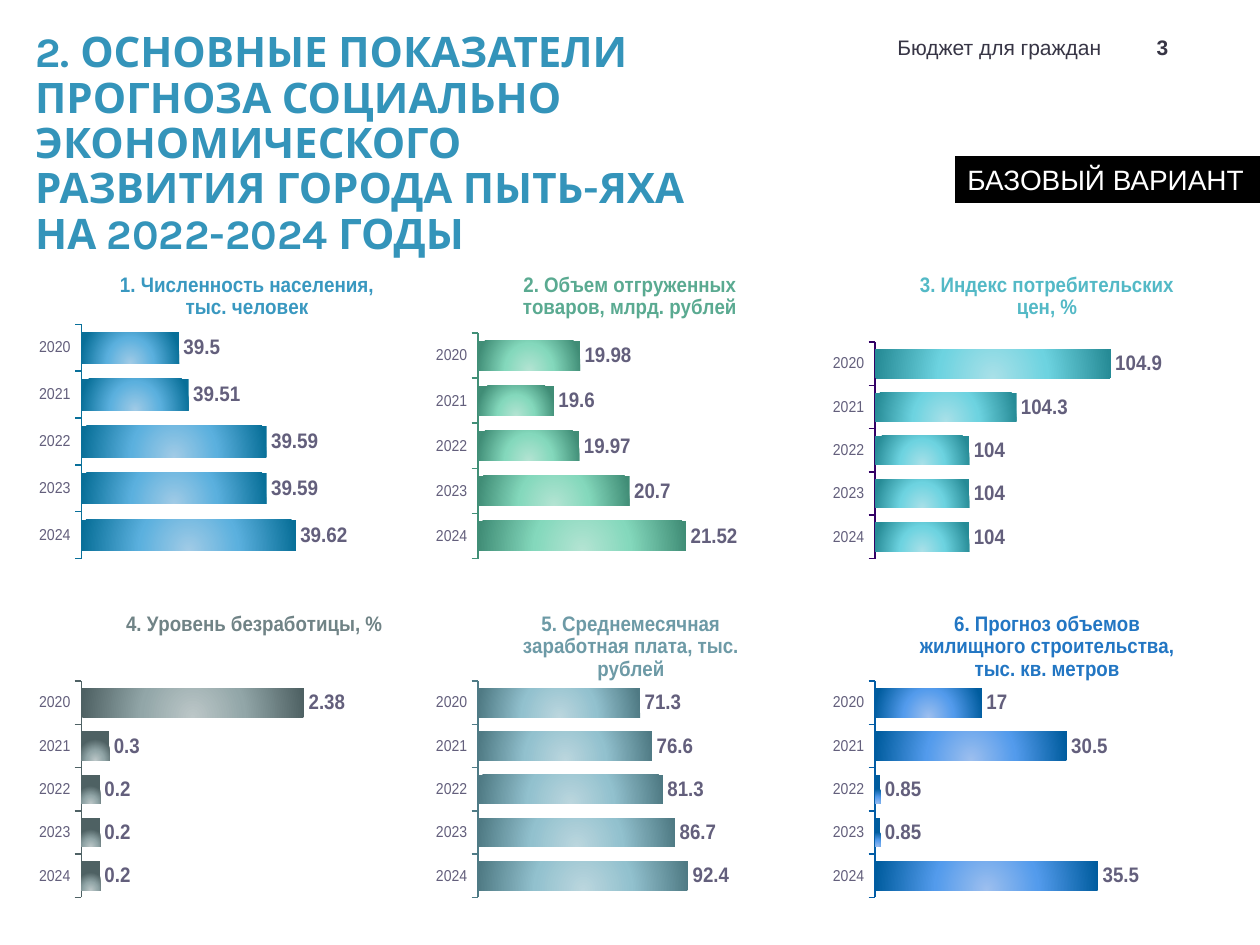
from lxml import etree
from pptx import Presentation
from pptx import util as u
from pptx.chart.data import CategoryChartData
from pptx.dml.color import RGBColor
from pptx.enum import chart as charts, shapes, text
from pptx.oxml import parse_xml
from pptx.oxml.ns import nsdecls, qn

WHITE = RGBColor(0xFF, 0xFF, 0xFF)
BLACK = RGBColor(0, 0, 0)
HEADING = RGBColor(0x34, 0x94, 0xBA)
INK = RGBColor(0x37, 0x35, 0x45)
LABEL = RGBColor(0x63, 0x5F, 0x7C)

COLUMN_LEFT, COLUMN_STEP = 0.31, 3.15
ROW_TOP, ROW_STEP = 2.08, 2.69
CHART_WIDTH, CHART_HEIGHT = 3.07, 2.36
YEARS = ["2020", "2021", "2022", "2023", "2024"]

INDICATORS = [
    ("1. Численность населения, тыс. человек", [39.5, 39.51, 39.59, 39.59, 39.62],
     "3998C0", "09709A", ("A1CBE6", "5BB0DE", "086F98"), (0.01, 0.21, 0.7, 0.79), 0.11),
    ("2. Объем отгруженных товаров, млрд. рублей", [19.98, 19.6, 19.97, 20.7, 21.52],
     "5AAA91", "418F77", ("B4E4D3", "84D8BC", "408D76"), (0, 0.24, 0.7, 0.76), 0.12),
    ("3. Индекс потребительских цен, %", [104.9, 104.3, 104, 104, 104],
     "53B9C6", "330066", ("A9E0E8", "6DD3E0", "268B96"), (0, 0.27, 0.73, 0.73), 0.12),
    ("4. Уровень безработицы, %", [2.38, 0.3, 0.2, 0.2, 0.2],
     "708386", "4F6265", ("BCC7C8", "92A6A8", "4E6163"), (0, 0.27, 0.68, 0.73), 0.12),
    ("5. Среднемесячная заработная плата, тыс. рублей", [71.3, 76.6, 81.3, 86.7, 92.4],
     "6D9AA6", "4F7B86", ("BBD6DE", "92C1CE", "4F7A84"), (0, 0.27, 0.99, 0.73), 0.12),
    ("6. Прогноз объемов жилищного строительства, тыс. кв. метров", [17, 30.5, 0.85, 0.85, 35.5],
     "2276C3", "025CA5", ("9DBFEE", "539BEC", "005C9E"), (0, 0.27, 0.73, 0.73), 0.12),
]


def style(font, size, color, bold=False, name="Arial"):
    font.name, font.size, font.bold = name, u.Pt(size), bold
    font.color.rgb = color


def manual_layout(**settings):
    layout = parse_xml(f"<c:layout {nsdecls('c')}><c:manualLayout/></c:layout>")
    for tag, value in settings.items():
        etree.SubElement(layout[0], qn(f"c:{tag}")).set("val", str(value))
    return layout


deck = Presentation()
deck.slide_width, deck.slide_height = u.Inches(10), u.Inches(7.5)
page = deck.slides.add_slide(deck.slide_layouts[6])

TEXTS = [
    ("2. ОСНОВНЫЕ ПОКАЗАТЕЛИ ПРОГНОЗА СОЦИАЛЬНО ЭКОНОМИЧЕСКОГО РАЗВИТИЯ ГОРОДА ПЫТЬ-ЯХА НА 2022-2024 ГОДЫ",
     (0.28, 0.2, 5.2, 1.69), 24, HEADING, True, "Karla", text.PP_ALIGN.LEFT, text.MSO_ANCHOR.TOP),
    ("Бюджет для граждан", (6.42, 0.19, 2.42, 0.33), 12, INK, False, "Arial",
     text.PP_ALIGN.RIGHT, text.MSO_ANCHOR.BOTTOM),
    ("3", (8.95, 0.19, 0.55, 0.33), 12, INK, True, "Arial",
     text.PP_ALIGN.CENTER, text.MSO_ANCHOR.BOTTOM),
]
for words, place, size, color, bold, name, align, anchor in TEXTS:
    box = page.shapes.add_textbox(*map(u.Inches, place))
    frame = box.text_frame
    frame.text, frame.word_wrap, frame.vertical_anchor = words, True, anchor
    para = frame.paragraphs[0]
    para.alignment = align
    style(para.runs[0].font, size, color, bold, name)
    if color == HEADING:
        frame.margin_left = frame.margin_right = 0
        para.line_spacing = 0.9

banner = page.shapes.add_shape(shapes.MSO_SHAPE.RECTANGLE, *map(u.Inches, (7.58, 1.24, 2.42, 0.37)))
banner.shadow.inherit = False
banner.fill.solid()
banner.fill.fore_color.rgb = BLACK
banner.line.fill.background()
frame = banner.text_frame
frame.text, frame.word_wrap = "БАЗОВЫЙ ВАРИАНТ", False
frame.auto_size = text.MSO_AUTO_SIZE.SHAPE_TO_FIT_TEXT
frame.vertical_anchor = text.MSO_ANCHOR.TOP
frame.paragraphs[0].alignment = text.PP_ALIGN.LEFT
style(frame.paragraphs[0].runs[0].font, 16, WHITE)

for index, (heading, values, title_color, axis_color, stops, plot_area, title_left) in enumerate(INDICATORS):
    row, column = divmod(index, 3)
    data = CategoryChartData()
    data.categories = YEARS
    data.add_series("Series 1", values)
    place = (COLUMN_LEFT + column * COLUMN_STEP, ROW_TOP + row * ROW_STEP, CHART_WIDTH, CHART_HEIGHT)
    chart = page.shapes.add_chart(charts.XL_CHART_TYPE.BAR_CLUSTERED, *map(u.Inches, place), data).chart
    style(chart.font, 10, LABEL)
    chart.has_legend = False

    title = chart.chart_title
    title.text_frame.text = heading
    style(title.text_frame.paragraphs[0].runs[0].font, 12, RGBColor.from_string(title_color), True)
    title.include_in_layout = False
    title_xml = title._element
    for old in title_xml.findall(qn("c:layout")):
        title_xml.remove(old)
    title_xml.find(qn("c:tx")).addnext(
        manual_layout(xMode="edge", yMode="edge", x=title_left, y=0.02))

    years = chart.category_axis
    years.reverse_order = True
    years.major_tick_mark = charts.XL_TICK_MARK.OUTSIDE
    years.has_major_gridlines = False
    style(years.tick_labels.font, 9, LABEL)
    years.format.line.color.rgb = RGBColor.from_string(axis_color)
    years.format.line.width = u.Pt(1)

    scale = chart.value_axis
    scale.visible = False
    scale.major_gridlines.format.line.color.rgb = WHITE
    scale.major_gridlines.format.line.width = u.Pt(0.75)
    if heading.startswith("5."):
        scale.minimum_scale, scale.maximum_scale = 0, 150

    plot = chart.plots[0]
    plot.gap_width, plot.vary_by_categories = 50, False
    plot.has_data_labels = True
    labels = plot.data_labels
    labels.show_value = True
    labels.number_format, labels.number_format_is_linked = "General", False
    labels.position = charts.XL_LABEL_POSITION.OUTSIDE_END
    style(labels.font, 12, LABEL, True)

    bars = plot.series[0]
    bars.invert_if_negative = False
    bars.format.fill.gradient()
    gradient = bars._element.find(f".//{qn('a:gradFill')}")
    stop_xml = "".join(f'<a:gs pos="{position}"><a:srgbClr val="{color}"/></a:gs>'
                       for position, color in zip((0, 46000, 100000), stops))
    gradient.getparent().replace(gradient, parse_xml(
        f'<a:gradFill {nsdecls("a")}><a:gsLst>{stop_xml}</a:gsLst><a:path path="circle">'
        '<a:fillToRect l="110000" t="250000" r="110000" b="40000"/></a:path></a:gradFill>'))

    area = chart._chartSpace.chart.plotArea
    for old in area.findall(qn("c:layout")):
        area.remove(old)
    x, y, w, h = plot_area
    area.insert(0, manual_layout(layoutTarget="inner", xMode="edge", yMode="edge", x=x, y=y, w=w, h=h))

deck.save("out.pptx")
